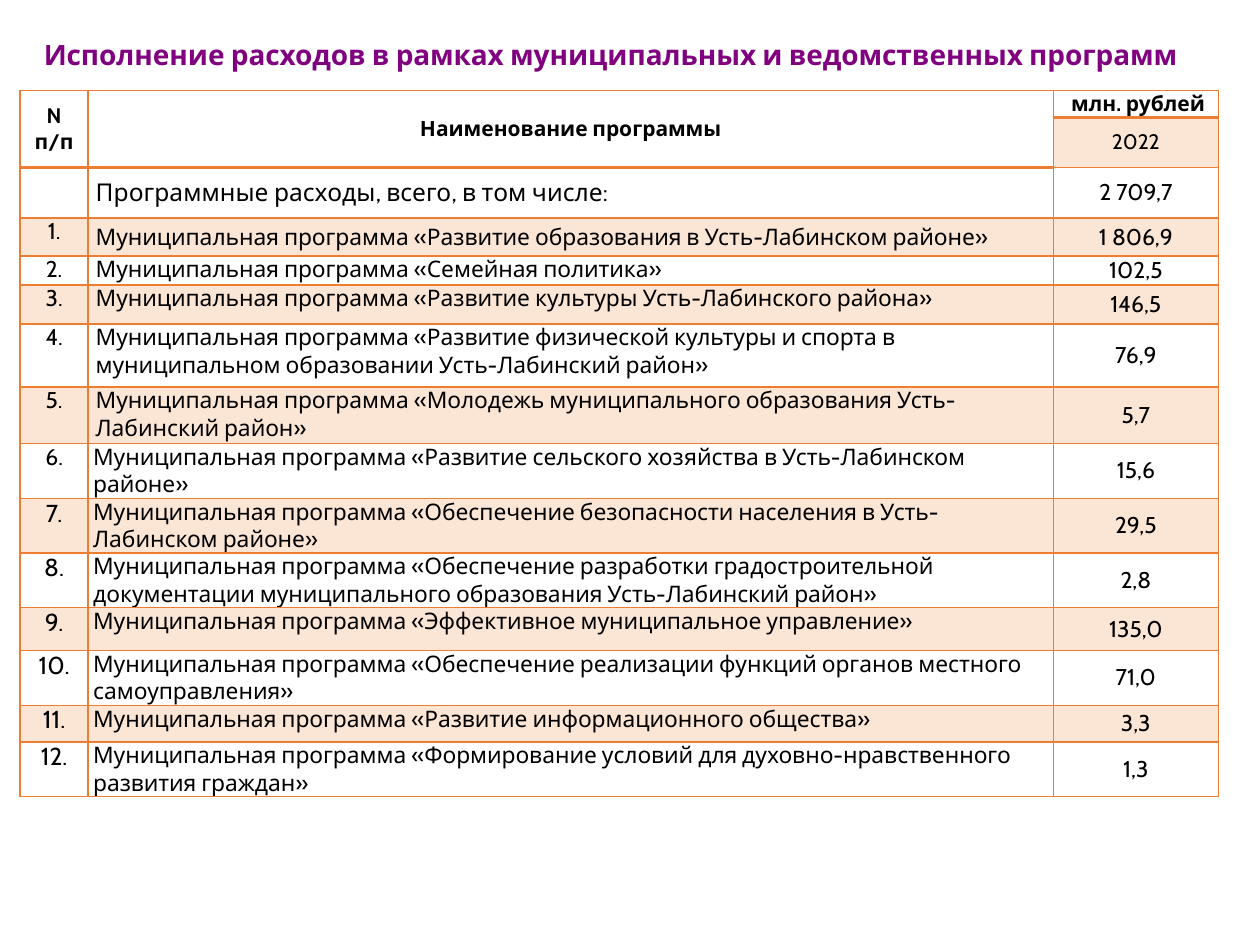
from dataclasses import dataclass

from lxml.etree import SubElement
from pptx import Presentation
from pptx.dml.color import RGBColor
from pptx.enum.text import MSO_ANCHOR, PP_ALIGN
from pptx.oxml import parse_xml
from pptx.oxml.ns import nsdecls, qn
from pptx.util import Inches, Pt


@dataclass(frozen=True)
class Theme:
    font: str = "Cabin"
    heading: str = "800080"
    ink: str = "000000"
    accent: str = "ED7D31"
    band_alpha: int = 20000
    title_size: int = 16
    header_size: int = 12
    total_size: int = 14
    body_size: int = 13
    late_number_size: int = 14
    rule: int = 1
    header_rule: int = 2


class BudgetSlide:
    """Builds the budget slide in one theme."""

    def __init__(self, slide, theme):
        self.slide = slide
        self.theme = theme

    def add_text(self, paragraph, text, size, color, bold=False):
        for index, line in enumerate(text.split("\n")):
            if index:
                paragraph.add_line_break()
            run = paragraph.add_run()
            run.text = line
            run.font.name = self.theme.font
            run.font.size = Pt(size)
            run.font.bold = bold
            run.font.color.rgb = RGBColor.from_string(color)

    def title(self, text, left, top, width, height):
        box = self.slide.shapes.add_textbox(
            Inches(left), Inches(top), Inches(width), Inches(height))
        box.text_frame.word_wrap = True
        self.add_text(box.text_frame.paragraphs[0], text,
                      self.theme.title_size, self.theme.heading, True)

    def table(self, left, top, widths, heights):
        frame = self.slide.shapes.add_table(
            len(heights), len(widths), Inches(left), Inches(top),
            Inches(sum(widths)), Inches(sum(heights)))
        table = frame.table
        table.first_row = table.horz_banding = False
        for column, width in zip(table.columns, widths):
            column.width = Inches(width)
        for row, height in zip(table.rows, heights):
            row.height = Inches(height)
        return table

    def cell(self, cell, text, size, inset, bold=False, centered=True, middle=True):
        cell.margin_left = cell.margin_right = Inches(inset)
        cell.margin_top = cell.margin_bottom = 0
        cell.vertical_anchor = MSO_ANCHOR.MIDDLE if middle else MSO_ANCHOR.TOP
        paragraph = cell.text_frame.paragraphs[0]
        paragraph.alignment = PP_ALIGN.CENTER if centered else PP_ALIGN.LEFT
        self.add_text(paragraph, text, size, self.theme.ink, bold)

    def paint(self, cell, banded, top_rule, bottom_rule):
        properties = cell._tc.get_or_add_tcPr()
        if banded:
            cell.fill.solid()
            cell.fill.fore_color.rgb = RGBColor.from_string(self.theme.accent)
            color = properties.find(".//" + qn("a:srgbClr"))
            SubElement(color, qn("a:alpha"), val=str(self.theme.band_alpha))
        else:
            cell.fill.background()
        rules = {"L": self.theme.rule, "R": self.theme.rule,
                 "T": top_rule, "B": bottom_rule}
        for index, (side, points) in enumerate(rules.items()):
            properties.insert(index, parse_xml(
                f'<a:ln{side} {nsdecls("a")} w="{Pt(points)}"><a:solidFill>'
                f'<a:srgbClr val="{self.theme.accent}"/></a:solidFill></a:ln{side}>'))


PROGRAMS = [
    ("Развитие образования в Усть-Лабинском районе", "1 806,9"),
    ("Семейная политика", "102,5"),
    ("Развитие культуры Усть-Лабинского района", "146,5"),
    ("Развитие физической культуры и спорта в муниципальном образовании "
     "Усть-Лабинский район", "76,9"),
    ("Молодежь муниципального образования Усть-Лабинский район", "5,7"),
    ("Развитие сельского хозяйства в Усть-Лабинском районе", "15,6"),
    ("Обеспечение безопасности населения в Усть-Лабинском районе", "29,5"),
    ("Обеспечение разработки градостроительной документации муниципального "
     "образования Усть-Лабинский район", "2,8"),
    ("Эффективное муниципальное управление", "135,0"),
    ("Обеспечение реализации функций органов местного самоуправления", "71,0"),
    ("Развитие информационного общества", "3,3"),
    ("Формирование условий для духовно-нравственного развития граждан", "1,3"),
]
COLUMN_WIDTHS = [0.54, 7.66, 1.31]
ROW_HEIGHTS = [0.21, 0.3, 0.39, 0.3, 0.23, 0.31, 0.5, 0.45,
               0.31, 0.29, 0.26, 0.34, 0.32, 0.29, 0.34]


def main():
    theme = Theme()
    presentation = Presentation()
    presentation.slide_width, presentation.slide_height = Inches(10), Inches(7.5)
    budget = BudgetSlide(
        presentation.slides.add_slide(presentation.slide_layouts[6]), theme)
    budget.title("Исполнение расходов в рамках муниципальных и ведомственных программ",
                 0.25, 0.25, 9.4, 0.47)
    expenses = budget.table(0.16, 0.72, COLUMN_WIDTHS, ROW_HEIGHTS)

    for column in range(2):
        expenses.cell(0, column).merge(expenses.cell(1, column))
    for column, heading in enumerate(["N\nп/п", "Наименование программы", " млн. рублей"]):
        budget.cell(expenses.cell(0, column), heading, theme.header_size, 0.06, bold=True)
    budget.cell(expenses.cell(1, 2), "2022", theme.header_size, 0.06)
    budget.cell(expenses.cell(2, 1), "Программные расходы, всего, в том числе:",
                theme.total_size, 0.06, centered=False)
    budget.cell(expenses.cell(2, 2), "2 709,7", theme.body_size, 0.07)

    for number, (program, amount) in enumerate(PROGRAMS, start=1):
        row = number + 2
        late = number > 6
        budget.cell(expenses.cell(row, 0), f"{number}.",
                    theme.late_number_size if late else theme.body_size,
                    0.04 if late else 0.06, middle=False)
        budget.cell(expenses.cell(row, 1), f"Муниципальная программа «{program}»",
                    theme.body_size, 0.04 if number > 5 else 0.06,
                    centered=False, middle=number == 1)
        budget.cell(expenses.cell(row, 2), amount, theme.body_size, 0.07)

    for row in range(len(ROW_HEIGHTS)):
        for column in range(len(COLUMN_WIDTHS)):
            header_end = 0 if column == 2 else 1
            banded = row % 2 == 1 and (row > 1 or column == 2)
            top_rule = theme.header_rule if row == header_end + 1 else theme.rule
            bottom_rule = theme.header_rule if row <= header_end else theme.rule
            budget.paint(expenses.cell(row, column), banded, top_rule, bottom_rule)

    presentation.save("out.pptx")


if __name__ == "__main__":
    main()
